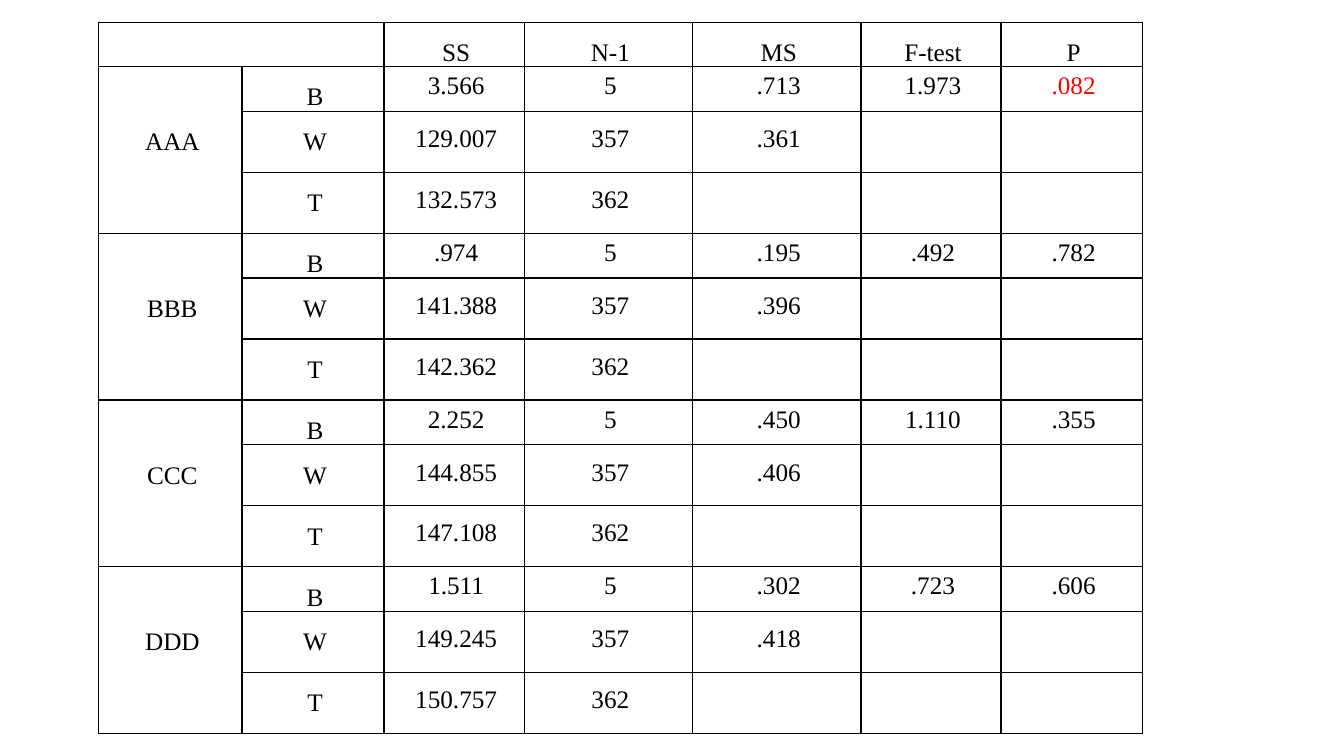
"""Build a slide with an analysis-of-variance table for four groups."""
from lxml import etree
from pptx import Presentation
from pptx.dml.color import RGBColor
from pptx.enum import text as t
from pptx.oxml import ns
from pptx.util import Inches, Pt

HEADER = ["SS", "N-1", "MS", "F-test", "P"]
SOURCES = ["B", "W", "T"]
GROUPS = {
    "AAA": [["3.566", "5", ".713", "1.973", ".082"],
            ["129.007", "357", ".361"],
            ["132.573", "362"]],
    "BBB": [[".974", "5", ".195", ".492", ".782"],
            ["141.388", "357", ".396"],
            ["142.362", "362"]],
    "CCC": [["2.252", "5", ".450", "1.110", ".355"],
            ["144.855", "357", ".406"],
            ["147.108", "362"]],
    "DDD": [["1.511", "5", ".302", ".723", ".606"],
            ["149.245", "357", ".418"],
            ["150.757", "362"]],
}
HIGHLIGHTS = {".082": "FF0000"}
BLACK = "000000"
LEFT, TOP = 0.98, 0.22
COL_WIDTHS = [1.42, 1.41, 1.39, 1.67, 1.67, 1.39, 1.4]
SHORT_ROW, GROUP_HEIGHT = 0.44, 1.65
TALL_ROW = (GROUP_HEIGHT - SHORT_ROW) / 2
ROW_HEIGHTS = [SHORT_ROW] + [SHORT_ROW, TALL_ROW, TALL_ROW] * len(GROUPS)
LINE = 16 / 72
FONT = {"name": "Times New Roman", "size": Pt(18), "bold": False}
ANCHOR = t.MSO_ANCHOR


def color(value):
    return RGBColor.from_string(value)


def write(cell, words, anchor, top=0):
    margins = {"margin_left": 0.04, "margin_right": 0, "margin_top": top, "margin_bottom": 0}
    for name, value in margins.items():
        setattr(cell, name, Inches(value))
    cell.vertical_anchor = anchor
    p = cell.text_frame.paragraphs[0]
    p.alignment = t.PP_ALIGN.CENTER
    p.line_spacing = Pt(16)
    r = p.add_run()
    r.text = words
    for name, value in FONT.items():
        setattr(r.font, name, value)
    r.font.color.rgb = color(HIGHLIGHTS.get(words, BLACK))


def outline(cell):
    tcPr = cell._tc.get_or_add_tcPr()
    for side in ("lnL", "lnR", "lnT", "lnB"):
        ln = etree.SubElement(tcPr, ns.qn(f"a:{side}"), w=str(Pt(1)))
        fill = etree.SubElement(ln, ns.qn("a:solidFill"))
        etree.SubElement(fill, ns.qn("a:srgbClr"), val=BLACK)
    cell.fill.background()


def main():
    prs = Presentation()
    prs.slide_width, prs.slide_height = Inches(13.33), Inches(7.5)
    s = prs.slides.add_slide(prs.slide_layouts[6])
    frame = s.shapes.add_table(
        len(ROW_HEIGHTS), len(COL_WIDTHS), Inches(LEFT), Inches(TOP),
        Inches(sum(COL_WIDTHS)), Inches(sum(ROW_HEIGHTS)))
    table = frame.table
    table.first_row = table.horz_banding = False
    for column, width in zip(table.columns, COL_WIDTHS):
        column.width = Inches(width)
    for row, height in zip(table.rows, ROW_HEIGHTS):
        row.height = Inches(height)
    for cell in table.iter_cells():
        outline(cell)

    table.cell(0, 0).merge(table.cell(0, 1))
    for col, label in enumerate(HEADER, 2):
        write(table.cell(0, col), label, ANCHOR.BOTTOM)
    for g, (group, rows) in enumerate(GROUPS.items()):
        first = 1 + g * len(SOURCES)
        table.cell(first, 0).merge(table.cell(first + len(SOURCES) - 1, 0))
        write(table.cell(first, 0), group, ANCHOR.TOP, 3 * LINE)
        for row, (source, values) in enumerate(zip(SOURCES, rows), first):
            write(table.cell(row, 1), source, ANCHOR.TOP, LINE)
            for col, value in enumerate(values, 2):
                write(table.cell(row, col), value, ANCHOR.MIDDLE)
    prs.save("out.pptx")


if __name__ == "__main__":
    main()
